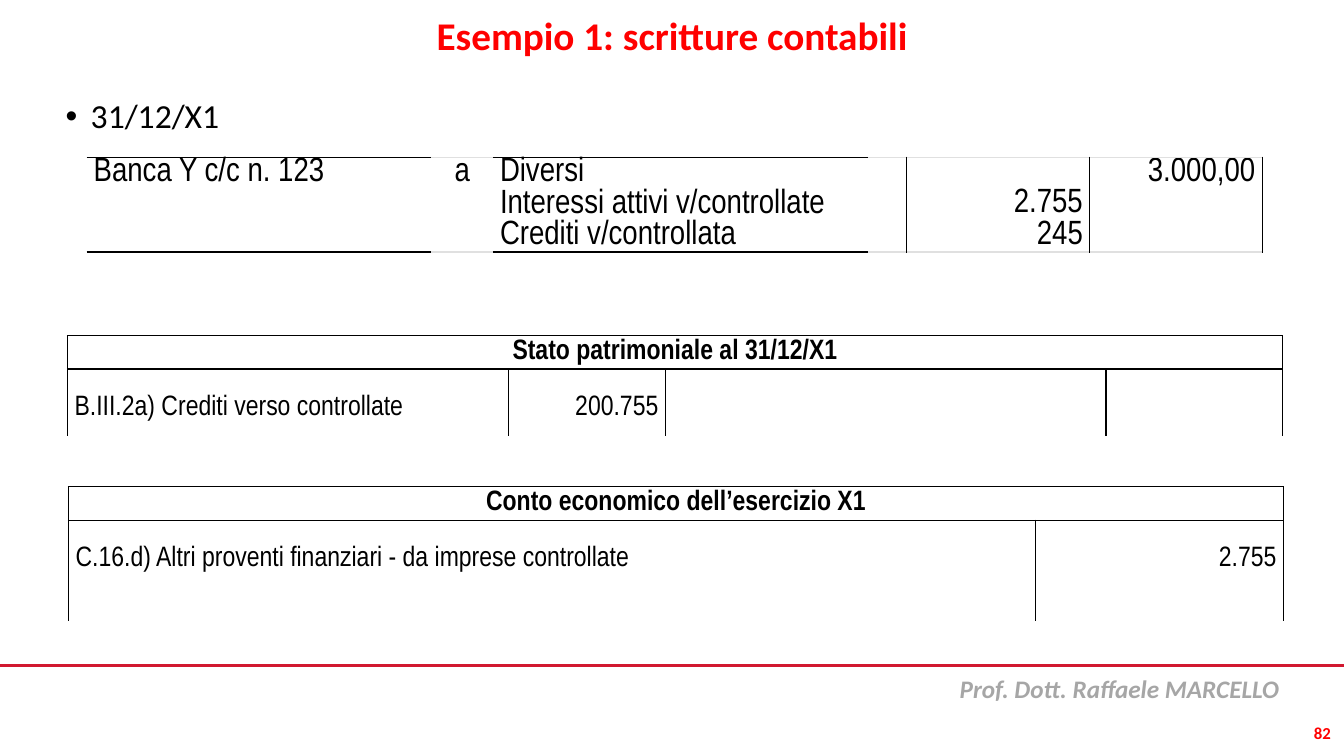
from dataclasses import dataclass

from lxml import etree
from pptx import Presentation
from pptx.dml.color import RGBColor
from pptx.enum import shapes, text
from pptx.oxml import ns
from pptx.util import Inches, Pt

LEFT, CENTER, RIGHT = text.PP_ALIGN.LEFT, text.PP_ALIGN.CENTER, text.PP_ALIGN.RIGHT
TOP, MIDDLE = text.MSO_ANCHOR.TOP, text.MSO_ANCHOR.MIDDLE
NO_STYLE = "{2D5ABB26-0587-4C30-8999-92F81FD0307C}"


@dataclass(frozen=True)
class Theme:
    body_font: str = "Calibri"
    table_font: str = "Arial Narrow"
    black: str = "000000"
    red: str = "FF0000"
    rule: str = "D11830"
    gray: str = "A6A6A6"
    pale: str = "E0E0E0"
    title: int = 28
    body: int = 24
    table: int = 20
    footer: int = 18
    number: int = 12


@dataclass
class Cell:
    lines: tuple = ()
    align: int = LEFT
    borders: tuple = ()  # (side, colour) pairs, side one of L R T B
    top: float = 0  # space above the text, in inches
    bold: bool = False
    span: int = 1
    anchor: int = TOP


class SlideBuilder:
    def __init__(self, prs, theme):
        self.theme = theme
        self.slide = prs.slides.add_slide(prs.slide_layouts[1])

    def add_run(self, p, words, size, color, font=None, bold=False, italic=False):
        r = p.add_run()
        r.text = words
        r.font.name = font or self.theme.body_font
        r.font.size = Pt(size)
        r.font.bold, r.font.italic = bold, italic
        r.font.color.rgb = RGBColor.from_string(color)

    def place(self, sp, box, anchor=TOP, inset=0):
        sp.left, sp.top, sp.width, sp.height = map(Inches, box)
        tf = sp.text_frame
        tf.word_wrap = True
        tf.auto_size = text.MSO_AUTO_SIZE.NONE
        tf.vertical_anchor = anchor
        tf.margin_left = tf.margin_right = Inches(inset)
        tf.margin_top = tf.margin_bottom = Inches(inset / 2)
        return tf.paragraphs[0]

    def title(self, words, box):
        p = self.place(self.slide.shapes.title, box, MIDDLE)
        p.alignment, p.line_spacing = CENTER, 0.9
        self.add_run(p, words, self.theme.title, self.theme.red, bold=True)

    def bullet(self, words, box):
        p = self.place(self.slide.placeholders[1], box)
        p.alignment, p.line_spacing, p.space_before = LEFT, 0.9, Pt(10)
        pPr = p._p.get_or_add_pPr()
        pPr.set("marL", str(Inches(0.25)))
        pPr.set("indent", str(-Inches(0.25)))
        etree.SubElement(pPr, ns.qn("a:buFont")).set("typeface", "Arial")
        etree.SubElement(pPr, ns.qn("a:buChar")).set("char", "•")
        self.add_run(p, words, self.theme.body, self.theme.black)

    def label(self, words, box, size, color, align=LEFT, anchor=TOP, inset=0, italic=False):
        p = self.place(self.slide.shapes.add_textbox(0, 0, 0, 0), box, anchor, inset)
        p.alignment = align
        self.add_run(p, words, size, color, bold=True, italic=italic)

    def rule(self, y, width):
        line = self.slide.shapes.add_connector(
            shapes.MSO_CONNECTOR.STRAIGHT, 0, Inches(y), Inches(width), Inches(y))
        line.line.color.rgb = RGBColor.from_string(self.theme.rule)
        line.line.width = Pt(1.75)
        etree.SubElement(line._element.spPr, ns.qn("a:effectLst"))

    def border(self, cell, borders):
        tcPr = cell._tc.get_or_add_tcPr()
        for i, (side, color) in enumerate(sorted(borders, key=lambda b: "LRTB".index(b[0]))):
            ln = etree.Element(ns.qn(f"a:ln{side}"), w=str(Pt(1)))
            fill = etree.SubElement(ln, ns.qn("a:solidFill"))
            etree.SubElement(fill, ns.qn("a:srgbClr")).set("val", color)
            tcPr.insert(i, ln)

    def fill_cell(self, cell, data, size):
        cell.margin_left = cell.margin_right = Inches(0.07)
        cell.margin_top, cell.margin_bottom = Inches(data.top), 0
        cell.vertical_anchor = data.anchor
        tf = cell.text_frame
        for i, words in enumerate(data.lines):
            p = tf.add_paragraph() if i else tf.paragraphs[0]
            p.alignment = data.align
            self.add_run(p, words, size, self.theme.black, self.theme.table_font, data.bold)

    def table(self, at, cols, heights, rows, size):
        frame = self.slide.shapes.add_table(
            len(heights), len(cols), *map(Inches, (*at, sum(cols), sum(heights))))
        table = frame.table
        table.first_row = table.horz_banding = False
        table._tbl.tblPr.find(ns.qn("a:tableStyleId")).text = NO_STYLE
        for column, width in zip(table.columns, cols):
            column.width = Inches(width)
        for r, (height, row) in enumerate(zip(heights, rows)):
            table.rows[r].height = Inches(height)
            c = 0
            for data in row:
                cell = table.cell(r, c)
                if data.span > 1:
                    cell.merge(table.cell(r, c + data.span - 1))
                for covered in range(c, c + data.span):
                    table.cell(r, covered).fill.background()
                    self.border(table.cell(r, covered), data.borders)
                self.fill_cell(cell, data, size)
                c += data.span

    def statement(self, at, heading, cols, heights, cells):
        """Framed heading over a row of columns left open at the bottom."""
        black = self.theme.black
        frame = tuple((side, black) for side in "LRTB")
        head = Cell((heading,), CENTER, frame, bold=True, span=len(cols), anchor=MIDDLE)
        row = [Cell((words,) if words else (), align, frame[:3], top=0.26)
               for words, align in cells]
        self.table(at, cols, heights, [[head], row], self.theme.table)


def main():
    theme = Theme()
    prs = Presentation()
    prs.slide_width, prs.slide_height = Inches(13.33), Inches(7.5)
    s = SlideBuilder(prs, theme)

    # Footer
    s.rule(6.6, 13.33)
    s.label("Prof. Dott. Raffaele MARCELLO", (9.42, 6.63, 3.9, 0.42),
            theme.footer, theme.gray, inset=0.1, italic=True)
    s.label("82", (12.73, 7.07, 0.47, 0.4), theme.number, theme.red, RIGHT, MIDDLE)

    # Title and date
    s.title("Esempio 1: scritture contabili", (0, 0, 13.33, 0.75))
    s.bullet("31/12/X1", (0.65, 0.99, 12.25, 0.44))

    # Journal entry
    dark = (("T", theme.black), ("B", theme.black))
    pale = (("T", theme.pale), ("B", theme.pale))
    left, right = ("L", theme.black), ("R", theme.black)
    entry = [
        Cell(("Banca Y c/c n. 123",), LEFT, dark),
        Cell(("a",), CENTER, pale),
        Cell(("Diversi", "Interessi attivi v/controllate", "Crediti v/controllata"), LEFT, dark),
        Cell(borders=(*pale, right)),
        Cell(("2.755", "245"), RIGHT, (*pale, left, right), top=0.31),
        Cell(("3.000,00",), RIGHT, (*pale, left, right)),
    ]
    s.table((0.86, 1.56), (3.42, 0.61, 3.72, 0.38, 1.82, 1.71), (0.94,), [entry], theme.body)

    # Balance sheet and income statement
    s.statement((0.67, 3.33), "Stato patrimoniale al 31/12/X1",
                (4.37, 1.56, 4.37, 1.75), (0.33, 0.67),
                [("B.III.2a) Crediti verso controllate", LEFT), ("200.755", RIGHT),
                 ("", LEFT), ("", LEFT)])
    s.statement((0.68, 4.83), "Conto economico dell’esercizio X1",
                (9.59, 2.46), (0.33, 1),
                [("C.16.d) Altri proventi finanziari - da imprese controllate", LEFT),
                 ("2.755", RIGHT)])

    prs.save("out.pptx")


if __name__ == "__main__":
    main()
